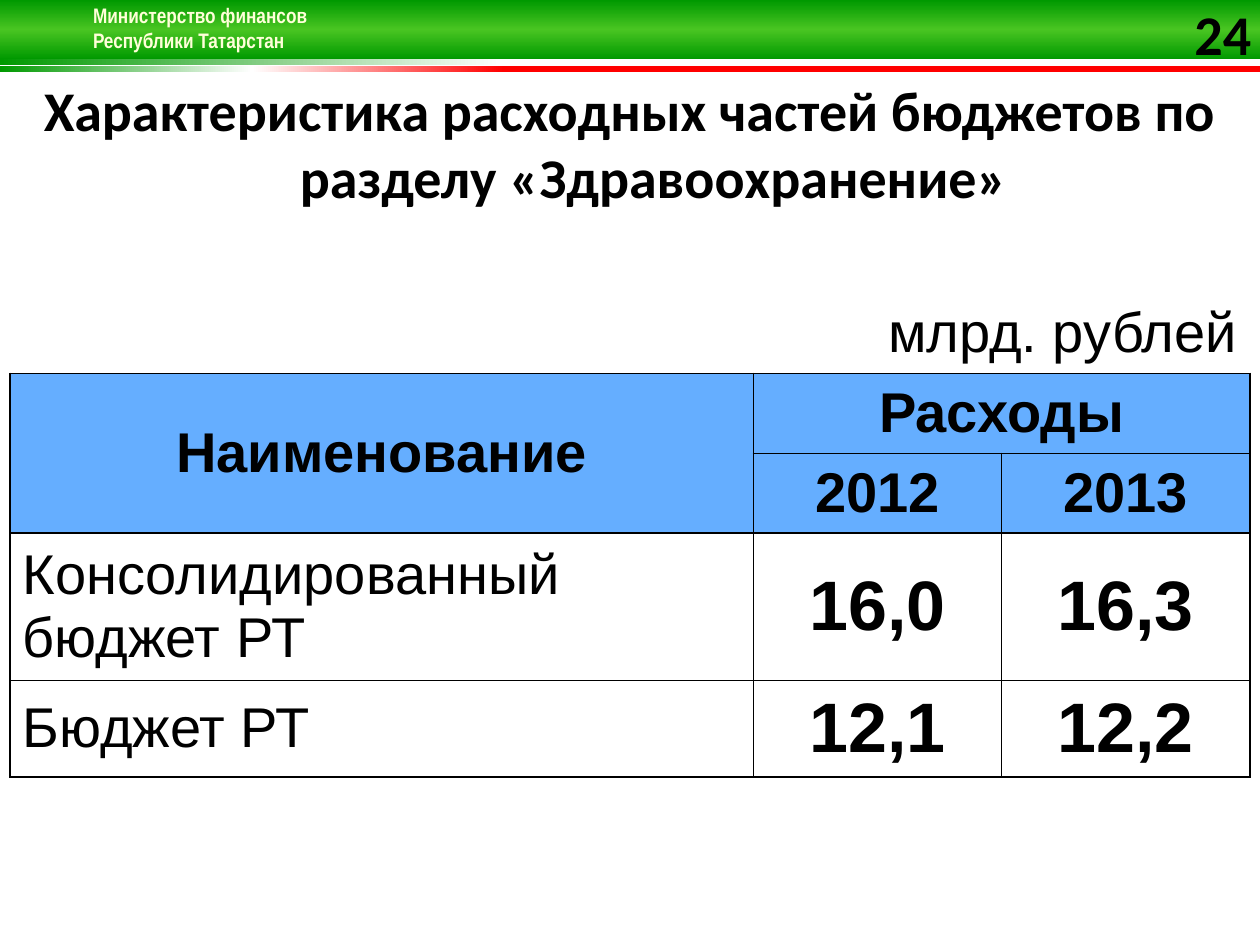
from lxml import etree
from pptx import Presentation
from pptx.dml.color import RGBColor
from pptx.enum.shapes import MSO_SHAPE
from pptx.enum.text import MSO_ANCHOR, PP_ALIGN
from pptx.oxml import parse_xml
from pptx.oxml.ns import nsdecls, qn
from pptx.util import Inches, Pt

RECT = MSO_SHAPE.RECTANGLE
LEFT, CENTER, RIGHT = PP_ALIGN.LEFT, PP_ALIGN.CENTER, PP_ALIGN.RIGHT
MIDDLE = MSO_ANCHOR.MIDDLE

BLACK, HEADER_BLUE, CREAM = "000000", "65AEFF", "FFFFD9"
BANDS = [
    (0.47, 0.05, [(0, "FFFFFF"), (60, "FFFFFF"), (100, "009900")], 180),
    (0.52, 0.05, [(60, "FF0000"), (80, "FFFFFF"), (100, "009900")], 180),
    (0, 0.47, [(0, "009900"), (50, "49C522"), (100, "009900")], 90),
]
MINISTRY = "Министерство финансов\vРеспублики Татарстан"
TITLE = "Характеристика расходных частей бюджетов по разделу «Здравоохранение»"
PAGE_NUMBER = "24"
ROWS = [
    ["млрд. рублей", "", ""],
    ["Наименование", "Расходы", ""],
    ["", "2012", "2013"],
    ["Консолидированный бюджет РТ", "16,0", "16,3"],
    ["Бюджет РТ", "12,1", "12,2"],
]
MERGES = [((0, 0), (0, 2)), ((1, 0), (2, 0)), ((1, 1), (1, 2))]
COLUMN_WIDTHS = [5.9, 1.97, 1.97]
ROW_HEIGHTS = [0.6, 0.6, 0.6, 1.09, 0.73]


def rgb(value):
    return RGBColor.from_string(value)


def style(paragraph, size, font, color=BLACK, bold=True, align=LEFT):
    paragraph.alignment = align
    for run in paragraph.runs:
        run.font.size = Pt(size)
        run.font.name = font
        run.font.bold = bold
        run.font.color.rgb = rgb(color)


def add_band(slide, top, height, stops, angle):
    band = slide.shapes.add_shape(RECT, 0, Inches(top), Inches(10), Inches(height))
    band.shadow.inherit = False
    band.line.fill.background()
    band.fill.gradient()
    band.fill.gradient_angle = 360 - angle
    stop_list = band.fill._fill._gradFill.find(qn("a:gsLst"))
    for old in list(stop_list):
        stop_list.remove(old)
    for position, color in stops:
        stop = etree.SubElement(stop_list, qn("a:gs"), pos=str(position * 1000))
        etree.SubElement(stop, qn("a:srgbClr"), val=color)


def add_text(slide, box, text, inset=None, **look):
    frame = slide.shapes.add_textbox(*map(Inches, box)).text_frame
    frame.word_wrap = True
    if inset is not None:
        frame.margin_left = frame.margin_right = Inches(inset)
        frame.margin_top = frame.margin_bottom = Inches(inset)
    frame.text = text
    style(frame.paragraphs[0], **look)
    return frame.paragraphs[0]


def add_shadow(paragraph):
    for run in paragraph.runs:
        effect = parse_xml(
            f'<a:effectLst {nsdecls("a")}><a:outerShdw blurRad="38100" dist="38100" '
            'dir="2700000"><a:srgbClr val="000000"><a:alpha val="43000"/></a:srgbClr>'
            '</a:outerShdw></a:effectLst>')
        run.font._element.find(qn("a:solidFill")).addnext(effect)


def set_borders(cell, visible):
    properties = cell._tc.get_or_add_tcPr()
    for index, side in enumerate(["lnL", "lnR", "lnT", "lnB"]):
        paint = (f'<a:solidFill><a:srgbClr val="{BLACK}"/></a:solidFill>'
                 if side in visible else "<a:noFill/>")
        properties.insert(index, parse_xml(
            f'<a:{side} {nsdecls("a")} w="12700">{paint}</a:{side}>'))


def add_budget_table(slide):
    table = slide.shapes.add_table(
        len(ROWS), len(COLUMN_WIDTHS), Inches(0.08), Inches(2.33),
        Inches(sum(COLUMN_WIDTHS)), Inches(sum(ROW_HEIGHTS))).table
    table.first_row = table.horz_banding = False
    for column, width in zip(table.columns, COLUMN_WIDTHS):
        column.width = Inches(width)
    for row, height in zip(table.rows, ROW_HEIGHTS):
        row.height = Inches(height)
    for start, end in MERGES:
        table.cell(*start).merge(table.cell(*end))
    for r, row in enumerate(ROWS):
        is_unit, is_header = r == 0, r in (1, 2)
        for c, text in enumerate(row):
            cell = table.cell(r, c)
            is_value = r > 2 and c > 0
            cell.vertical_anchor = MIDDLE
            if is_header:
                cell.fill.solid()
                cell.fill.fore_color.rgb = rgb(HEADER_BLUE)
            else:
                cell.fill.background()
            set_borders(cell, ["lnB"] if is_unit else ["lnL", "lnR", "lnT", "lnB"])
            if text:
                cell.text_frame.text = text
                align = RIGHT if is_unit else CENTER if is_header or is_value else LEFT
                style(cell.text_frame.paragraphs[0], 40 if is_value else 32, "Arial",
                      bold=is_header or is_value, align=align)


def main():
    deck = Presentation()
    deck.slide_width, deck.slide_height = Inches(10), Inches(7.5)
    slide = deck.slides.add_slide(deck.slide_layouts[6])
    for band in BANDS:
        add_band(slide, *band)
    ministry = add_text(slide, (0.64, -0.03, 1.92, 0.71), MINISTRY,
                        size=12, font="Arial Narrow", color=CREAM)
    add_shadow(ministry)
    title = add_text(slide, (0, 0.55, 10, 1.16), TITLE,
                     size=32, font="Calibri", align=CENTER)
    indent = Inches(0.38)
    title._p.get_or_add_pPr().set("marL", str(indent))
    title._p.get_or_add_pPr().set("indent", str(-indent))
    add_budget_table(slide)
    add_text(slide, (9.41, 0, 0.59, 0.54), PAGE_NUMBER, inset=0,
             size=32, font="Calibri", align=CENTER)
    deck.save("out.pptx")


if __name__ == "__main__":
    main()
